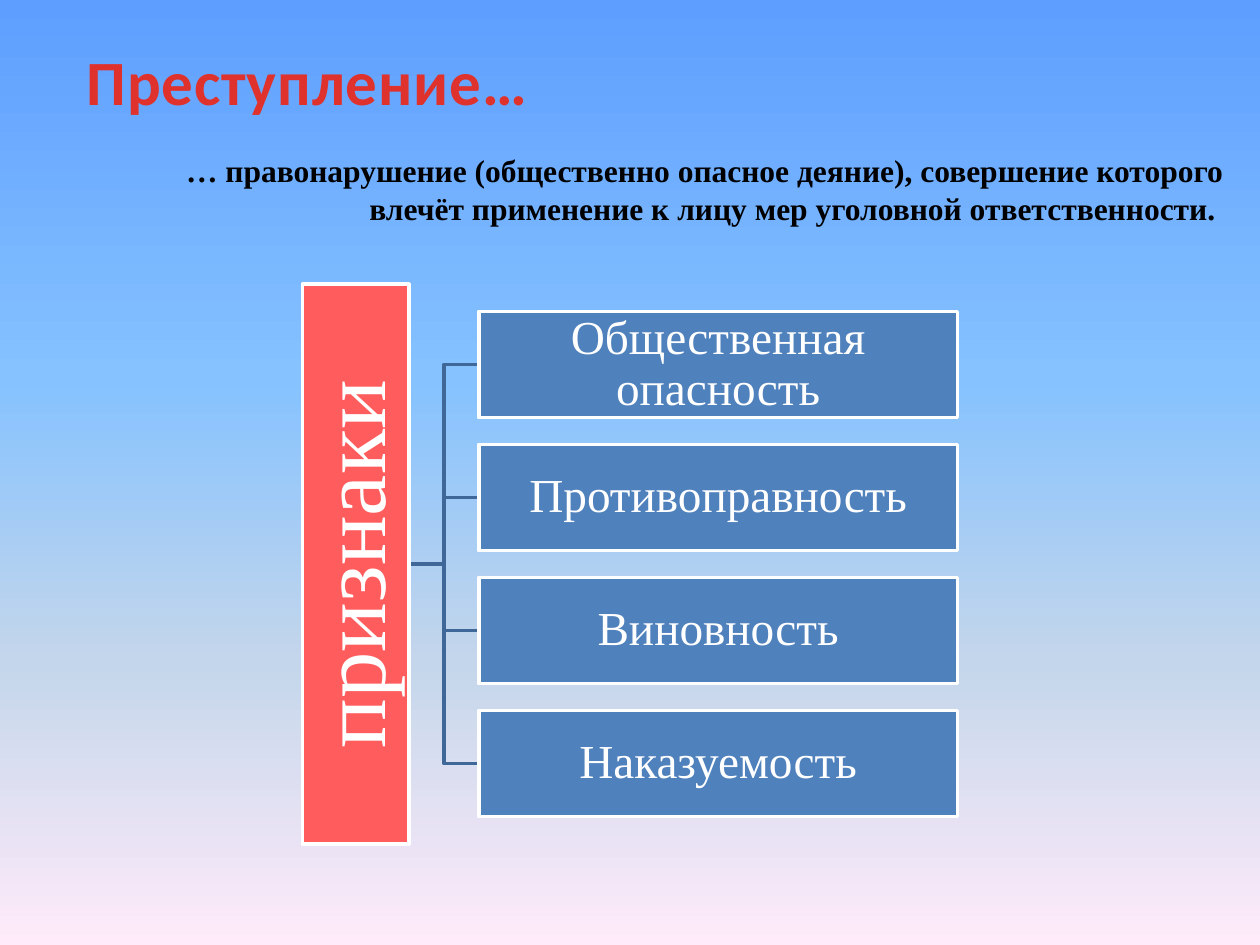
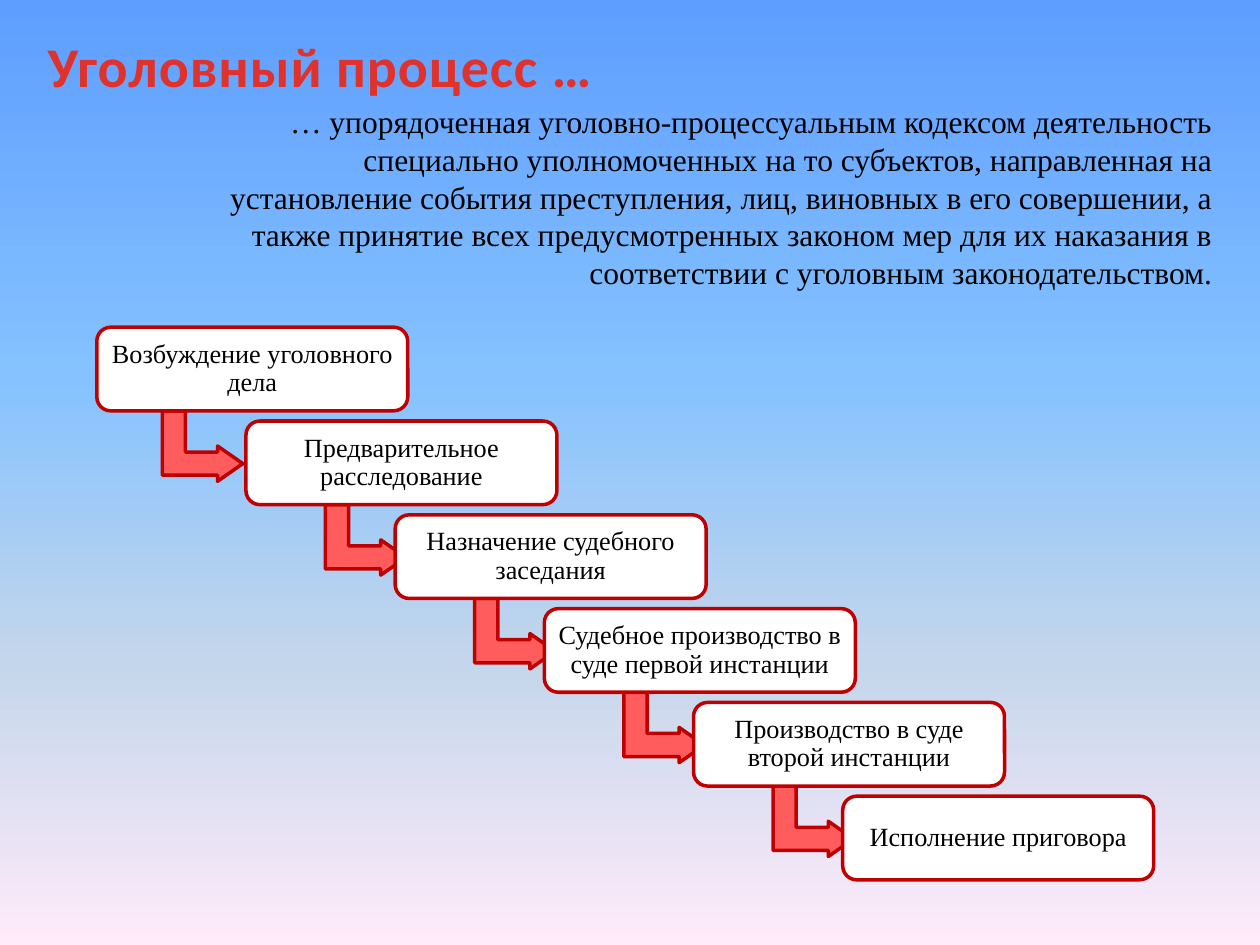
from dataclasses import dataclass

from lxml.etree import SubElement
from pptx import Presentation
from pptx.dml.color import RGBColor
from pptx.enum.shapes import MSO_CONNECTOR, MSO_SHAPE
from pptx.enum.text import MSO_ANCHOR, MSO_AUTO_SIZE, PP_ALIGN
from pptx.oxml.ns import qn
from pptx.util import Pt


@dataclass(frozen=True)
class Theme:
    sky: tuple = ((0, "5E9EFF"), (40, "85C2FF"), (70, "C4D6EB"), (100, "FFEBFA"))
    title_reds: tuple = ((25, "E0322D"), (100, "A2201C"))
    white: str = "FFFFFF"
    black: str = "000000"
    coral: str = "FF5D5D"
    crimson: str = "C00000"
    blue: str = "4F81BD"
    branch: str = "3F6797"
    title_font: str = "Calibri"
    body_font: str = "Times New Roman"
    body_size: int = 18
    root_size: int = 53
    feature_size: int = 27
    stage_size: int = 15
    line_width: int = 2


THEME = Theme()


def set_format(target, values):
    for name, value in values.items():
        setattr(target, name, value)


def set_gradient(fill, element, stops):
    """Fill from top to bottom with (percent, colour) stops."""
    fill.gradient()
    fill.gradient_angle = 270
    stop_list = element.find(".//" + qn("a:gsLst"))
    for stop in list(stop_list):
        stop_list.remove(stop)
    for percent, colour in stops:
        stop = SubElement(stop_list, qn("a:gs"), pos=str(percent * 1000))
        SubElement(stop, qn("a:srgbClr"), val=colour)


def set_line(line, colour):
    line.color.rgb = RGBColor.from_string(colour)
    line.width = Pt(THEME.line_width)


def add_slide(prs):
    s = prs.slides.add_slide(prs.slide_layouts[6])
    set_gradient(s.background.fill, s.element, THEME.sky)
    return s


def add_text_box(s, box, text, font, align=PP_ALIGN.LEFT):
    tf = s.shapes.add_textbox(*map(Pt, box)).text_frame
    set_format(tf, {"word_wrap": True, "auto_size": MSO_AUTO_SIZE.SHAPE_TO_FIT_TEXT})
    p = tf.paragraphs[0]
    p.alignment = align
    r = p.add_run()
    r.text = text
    set_format(r.font, font)
    return r


def add_title(s, box, text, size):
    r = add_text_box(s, box, text,
                     {"name": THEME.title_font, "size": Pt(size), "bold": True})
    set_gradient(r.font.fill, r.font._element, THEME.title_reds)
    r.font._element.set("spc", "50")


def add_definition(s, box, text, bold=False):
    font = {"name": THEME.body_font, "size": Pt(THEME.body_size), "bold": bold}
    r = add_text_box(s, box, text, font, PP_ALIGN.RIGHT)
    r.font.color.rgb = RGBColor.from_string(THEME.black)


def add_figure(s, kind, box, fill, line):
    sp = s.shapes.add_shape(kind, *map(Pt, box))
    sp.shadow.inherit = False
    sp.fill.solid()
    sp.fill.fore_color.rgb = RGBColor.from_string(fill)
    set_line(sp.line, line)
    return sp


def label(sp, text, size, colour, margin):
    tf = sp.text_frame
    set_format(tf, {"word_wrap": True, "vertical_anchor": MSO_ANCHOR.MIDDLE})
    set_format(tf, {f"margin_{side}": Pt(margin)
                    for side in ("left", "top", "right", "bottom")})
    p = tf.paragraphs[0]
    set_format(p, {"alignment": PP_ALIGN.CENTER, "line_spacing": 0.9})
    r = p.add_run()
    r.text = text
    set_format(r.font, {"name": THEME.body_font, "size": Pt(size)})
    r.font.color.rgb = RGBColor.from_string(colour)


def add_branch(s, root, feature):
    """Elbow from the root's right side to the feature's left, behind both."""
    c = s.shapes.add_connector(
        MSO_CONNECTOR.ELBOW, root.left + root.width, root.top + root.height // 2,
        feature.left, feature.top + feature.height // 2)
    c.begin_connect(root, 3)
    c.end_connect(feature, 1)
    set_line(c.line, THEME.branch)
    SubElement(c.element.spPr, qn("a:effectLst"))
    c.element.getparent().insert(2, c.element)


def add_feature_tree(s, root_text, features):
    left, top, width, height, step = 273.6, 177.9, 273.6, 60.8, 76
    root = add_figure(s, MSO_SHAPE.RECTANGLE, (172.8, 162.4, 60.8, 320),
                      THEME.coral, THEME.white)
    label(root, root_text, THEME.root_size, THEME.white, 2.7)
    root.text_frame._txBody.bodyPr.set("vert", "vert270")
    for i, text in enumerate(features):
        feature = add_figure(s, MSO_SHAPE.RECTANGLE,
                             (left, top + i * step, width, height),
                             THEME.blue, THEME.white)
        label(feature, text, THEME.feature_size, THEME.white, 1.4)
        add_branch(s, root, feature)


def add_step_arrow(s, x, y):
    arrow = add_figure(s, MSO_SHAPE.BENT_UP_ARROW, (x, y, 40.3, 46),
                       THEME.coral, THEME.crimson)
    arrow.rotation = 90
    for i, value in enumerate((0.328, 0.25, 0.358)):
        arrow.adjustments[i] = value


def add_staircase(s, stages):
    left, top, width, height = 55.3, 187, 177.7, 47.8
    step_x, step_y = 85.25, 53.6
    for i, text in enumerate(stages):
        x, y = left + i * step_x, top + i * step_y
        if i < len(stages) - 1:
            add_step_arrow(s, x + (48.3 if i else 40.3), y + 44.9)
        stage = add_figure(s, MSO_SHAPE.ROUNDED_RECTANGLE, (x, y, width, height),
                           THEME.white, THEME.crimson)
        label(stage, text, THEME.stage_size, THEME.black, 4.5)


def build_crime_slide(prs):
    s = add_slide(prs)
    add_title(s, (42.5, 20.9, 544.3, 51), "Преступление…", 36)
    add_definition(
        s, (65.5, 82.8, 640.8, 51),
        " … правонарушение (общественно опасное деяние), совершение которого "
        "влечёт применение к лицу мер уголовной ответственности. ", bold=True)
    add_feature_tree(s, "признаки", (
        "Общественная опасность", "Противоправность", "Виновность", "Наказуемость"))


def build_process_slide(prs):
    s = add_slide(prs)
    add_title(s, (20.2, 14.4, 544.3, 46), "Уголовный процесс …", 32)
    add_definition(
        s, (121.7, 54.7, 578.2, 116.6),
        "… упорядоченная уголовно-процессуальным кодексом деятельность "
        "специально уполномоченных на то субъектов, направленная на "
        "установление события преступления, лиц, виновных в его совершении, "
        "а также принятие всех предусмотренных законом мер для их наказания "
        "в соответствии с уголовным законодательством.")
    add_staircase(s, (
        "Возбуждение уголовного дела",
        "Предварительное расследование",
        "Назначение судебного заседания",
        "Судебное производство в суде первой инстанции",
        "Производство в суде второй инстанции",
        "Исполнение приговора"))


def main():
    prs = Presentation()
    set_format(prs, {"slide_width": Pt(720), "slide_height": Pt(540)})
    build_crime_slide(prs)
    build_process_slide(prs)
    prs.save("out.pptx")


if __name__ == "__main__":
    main()
